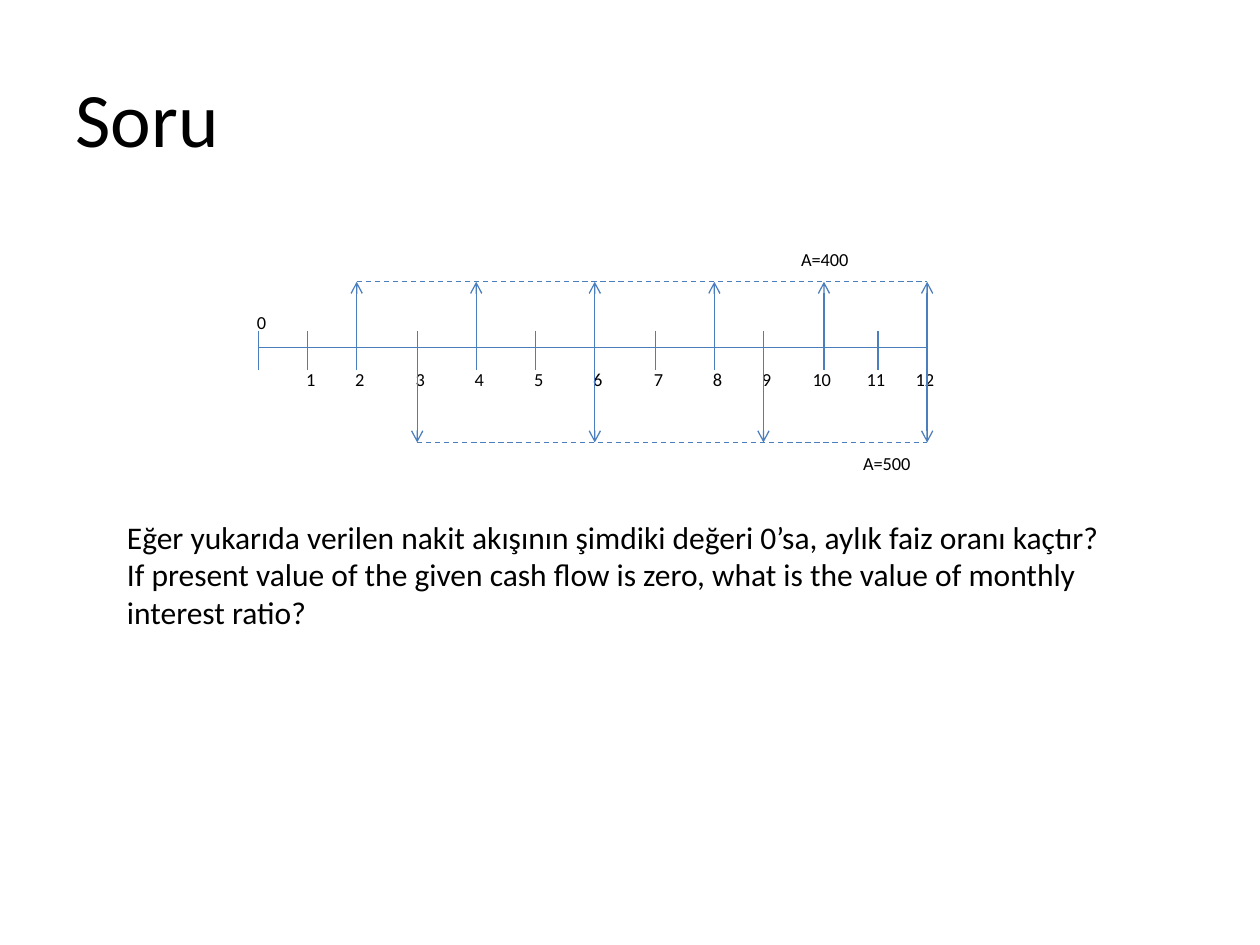
from lxml import etree
from pptx import Presentation
from pptx.dml.color import RGBColor
from pptx.enum import dml, shapes, text
from pptx.oxml import ns
from pptx.util import Cm, Pt

BLUE = RGBColor(0x4B, 0x7E, 0xBC)
BLACK = RGBColor(0, 0, 0)
FONT = "Calibri"

# Content
TITLE = "Soru"
QUESTION = [
    "Eğer yukarıda verilen nakit akışının şimdiki değeri 0’sa, aylık faiz oranı kaçtır?",
    "If present value of the given cash flow is zero, "
    "what is the value of monthly interest ratio?",
]
INCOME_MONTHS = [2, 4, 6, 8, 10, 12]
PAYMENT_MONTHS = [3, 6, 9, 12]
AMOUNTS = [("A=400", 15.9, 4.88), ("A=500", 17.15, 8.99)]

# Diagram geometry in centimetres; a month's index gives its place
MONTH_X = [5.21, 6.2, 7.19, 8.41, 9.6, 10.8, 11.99,
           13.21, 14.4, 15.39, 16.61, 17.7, 18.69]
AXIS_Y, INCOME_Y, PAYMENT_Y = 7.01, 5.68, 8.92
TICK_TOP, TICK_BOTTOM = 6.67, 7.46
LABEL_Y, START_LABEL_Y, LABEL_HEIGHT = 7.29, 6.15, 0.71


def add_line(parent, x1, y1, x2, y2, arrow=False, dashed=False):
    line = parent.add_connector(shapes.MSO_CONNECTOR.STRAIGHT,
                                Cm(x1), Cm(y1), Cm(x2), Cm(y2))
    line.line.color.rgb = BLUE
    line.line.width = Pt(0.75)
    if dashed:
        line.line.dash_style = dml.MSO_LINE.DASH
    if arrow:
        etree.SubElement(line.line._get_or_add_ln(), ns.qn("a:tailEnd"), type="arrow")
    etree.SubElement(line._element.spPr, ns.qn("a:effectLst"))


def add_text(parent, lines, x, y, width, height, size):
    box = parent.add_textbox(Cm(x), Cm(y), Cm(width), Cm(height))
    frame = box.text_frame
    frame.word_wrap = True
    frame.auto_size = text.MSO_AUTO_SIZE.SHAPE_TO_FIT_TEXT
    frame.text = "\n".join(lines)
    for para in frame.paragraphs:
        para.font.name = FONT
        para.font.size = Pt(size)
        para.font.color.rgb = BLACK


deck = Presentation()
deck.slide_width, deck.slide_height = Cm(25.4), Cm(19.05)
page = deck.slides.add_slide(deck.slide_layouts[5])

# Title
title = page.shapes.title
title.left, title.top, title.width, title.height = Cm(1.27), Cm(0.76), Cm(22.86), Cm(3.18)
title.text_frame.text = TITLE
heading = title.text_frame.paragraphs[0]
heading.alignment = text.PP_ALIGN.LEFT
heading.font.name = FONT
heading.font.size = Pt(44)
heading.font.color.rgb = BLACK

# Time axis with its ticks and month numbers
diagram = page.shapes.add_group_shape().shapes
add_line(diagram, MONTH_X[0], AXIS_Y, MONTH_X[-1], AXIS_Y)
for month, x in enumerate(MONTH_X):
    add_line(diagram, x, TICK_TOP, x, TICK_BOTTOM)
    label_width, shift = (0.61, 0.28) if month < 10 else (0.99, 0.48)
    label_y = LABEL_Y if month else START_LABEL_Y
    add_text(diagram, [str(month)], x - shift, label_y, label_width, LABEL_HEIGHT, 10.5)

# Cash flows: arrows joined by a dashed line
for months, level in ((INCOME_MONTHS, INCOME_Y), (PAYMENT_MONTHS, PAYMENT_Y)):
    for month in months:
        add_line(diagram, MONTH_X[month], AXIS_Y, MONTH_X[month], level, arrow=True)
    add_line(diagram, MONTH_X[months[0]], level, MONTH_X[months[-1]], level, dashed=True)
for amount, x, y in AMOUNTS:
    add_text(diagram, [amount], x, y, 1.8, LABEL_HEIGHT, 10.5)

# Question
add_text(page.shapes, QUESTION, 2.31, 10.31, 20.19, 2.57, 18)

deck.save("out.pptx")
